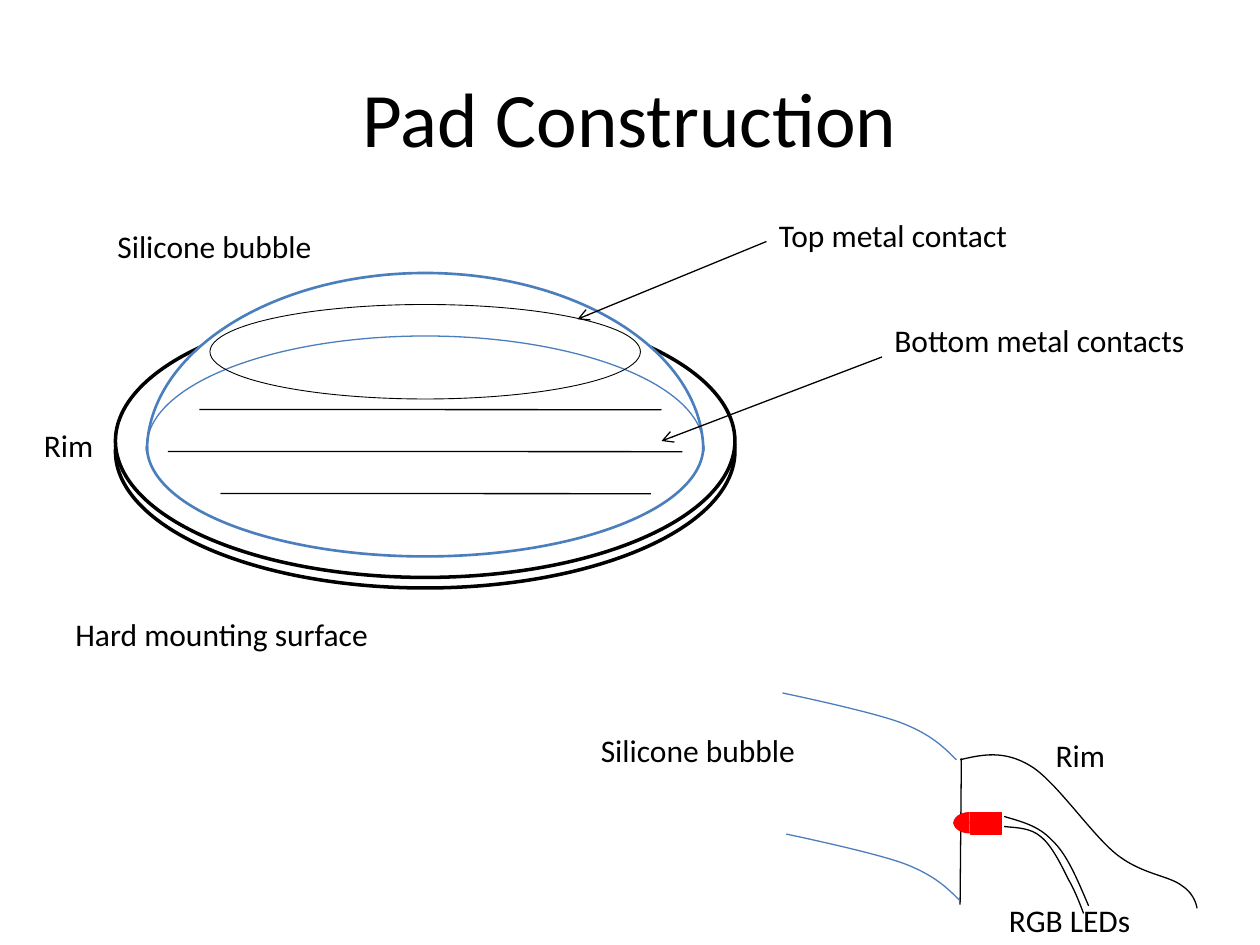
from lxml.etree import SubElement
from pptx import Presentation
from pptx.dml.color import RGBColor
from pptx.enum.shapes import MSO_CONNECTOR, MSO_SHAPE
from pptx.enum.text import MSO_ANCHOR, MSO_AUTO_SIZE, PP_ALIGN
from pptx.oxml.ns import qn
from pptx.util import Inches, Pt

BLACK, WHITE, BLUE, RED = "000000", "FFFFFF", "4B7EBC", "FF0000"


def color(hex_value):
    """Turn a hex string into a colour."""
    return RGBColor.from_string(hex_value)


def locate(region, point):
    """Turn a point on the grid of a region into slide lengths."""
    left, top, unit = region
    return Inches(left + point[0] * unit), Inches(top + point[1] * unit)


def style_text(frame, size, **formats):
    """Apply the font and the given frame settings."""
    for name, value in formats.items():
        setattr(frame, name, value)
    font = frame.paragraphs[0].runs[0].font
    for name, value in {"name": "Calibri", "size": Pt(size)}.items():
        setattr(font, name, value)
    font.color.rgb = color(BLACK)


def style_outline(shape, line, weight, fill=None):
    """Set fill and outline and remove the shadow."""
    shape.shadow.inherit = False
    shape.line.color.rgb = color(line)
    shape.line.width = Pt(weight)
    if fill:
        shape.fill.solid()
        shape.fill.fore_color.rgb = color(fill)
    else:
        shape.fill.background()


def add_label(slide, region, text, x, y, width):
    """Add an unwrapped caption of a width in inches."""
    label = slide.shapes.add_textbox(
        *locate(region, (x, y)), Inches(width), Inches(0.4))
    label.text_frame.text = text
    style_text(label.text_frame, 18, word_wrap=False,
               auto_size=MSO_AUTO_SIZE.SHAPE_TO_FIT_TEXT)


def add_preset(slide, region, kind, place, line, weight, fill=None, flip=""):
    """Add a preset shape, flipped along the axes named in flip."""
    x, y, width, height = place
    unit = region[2]
    shape = slide.shapes.add_shape(
        kind, *locate(region, (x, y)), Inches(width * unit), Inches(height * unit))
    style_outline(shape, line, weight, fill)
    for axis in flip:
        shape._element.spPr.xfrm.set("flip" + axis, "1")


def add_line(slide, region, start, end, arrow=False):
    """Add a thin black line, with an open arrowhead if asked."""
    line = slide.shapes.add_connector(
        MSO_CONNECTOR.STRAIGHT, *locate(region, start), *locate(region, end))
    line.line.color.rgb = color(BLACK)
    line.line.width = Pt(0.75)
    if arrow:
        SubElement(line.line._get_or_add_ln(), qn("a:tailEnd"), type="arrow")
    SubElement(line._element.spPr, qn("a:effectLst"))


def add_curve(slide, region, line, points):
    """Draw joined cubic curves, each with two control points and an end."""
    start, *others = [locate(region, point) for point in points]
    builder = slide.shapes.build_freeform(*start)
    builder.add_line_segments(others, close=False)
    curve = builder.convert_to_shape()
    style_outline(curve, line, 0.75)
    segments = list(curve._element.iter(qn("a:lnTo")))
    outline = segments[0].getparent()
    for first in range(0, len(segments), 3):
        cubic = SubElement(outline, qn("a:cubicBezTo"))
        for segment in segments[first:first + 3]:
            cubic.append(segment[0])
            outline.remove(segment)


def build_title(slide, left, top, width, height):
    """Fill the title placeholder."""
    title = slide.shapes.title
    box = {"left": left, "top": top, "width": width, "height": height}
    for name, value in box.items():
        setattr(title, name, Inches(value))
    title.text_frame.text = "Pad Construction"
    style_text(title.text_frame, 44, vertical_anchor=MSO_ANCHOR.MIDDLE)
    title.text_frame.paragraphs[0].alignment = PP_ALIGN.CENTER


def build_pad(slide, left, top):
    """Draw the pad and its captions on a grid of twelfths of an inch."""
    region = left, top, 1 / 12
    for rim_top in (4, 3):
        add_preset(slide, region, MSO_SHAPE.OVAL, (0, rim_top, 59, 26),
                   BLACK, 2, WHITE)
    dome, base = (3, 0, 53, 34), (3, 6, 53, 21)
    for place, weight, fill, upside in (
            (dome, 1.5, WHITE, ""), (base, 0.75, None, ""), (base, 1.5, None, "V")):
        for side in ("", "H"):
            add_preset(slide, region, MSO_SHAPE.ARC, place, BLUE, weight, fill,
                       side + upside)
    add_preset(slide, region, MSO_SHAPE.OVAL, (9, 3, 41, 9), BLACK, 0.5)
    for row, (start, end) in enumerate(((8, 52), (5, 54), (10, 51))):
        y = 13 + 4 * row
        add_line(slide, region, (start, y), (end, y + 0.02))
    for start, end in (((62, -3), (44, 4.4)), ((73, 8), (52, 16))):
        add_line(slide, region, start, end, arrow=True)
    for caption in (("Silicone bubble", -1, -5, 1.76),
                    ("Rim", -8, 14, 0.6),
                    ("Top metal contact", 62, -6, 2.03),
                    ("Bottom metal contacts", 73, 4, 2.53),
                    ("Hard mounting surface", -5, 32, 2.55)):
        add_label(slide, region, *caption)


def build_section(slide, left, top):
    """Draw the cross-section of the rim with its light and wires."""
    region = left, top, 1
    add_preset(slide, region, MSO_SHAPE.RECTANGLE, (1.5, 0.95, 0.25, 0.17),
               RED, 0.75, RED)
    add_line(slide, region, (1.43, 0.52), (1.42, 1.68))
    for flip, y in (("H", 0.95), ("HV", 0.94)):
        add_preset(slide, region, MSO_SHAPE.ARC, (1.37, y, 0.25, 0.17),
                   RED, 0.75, RED, flip)
    rim = [(1.42, 0.53), (1.59, 0.49), (1.77, 0.45), (1.98, 0.58), (2.18, 0.7),
           (2.46, 1.12), (2.66, 1.28), (2.86, 1.44), (3.08, 1.45), (3.18, 1.53),
           (3.29, 1.6), (3.3, 1.71), (3.3, 1.71)]
    upper_wire = [(1.77, 0.98), (1.9, 1.02), (2.04, 1.05), (2.15, 1.17),
                  (2.27, 1.28), (2.35, 1.48), (2.44, 1.69)]
    lower_wire = [(1.77, 1.06), (1.87, 1.07), (1.98, 1.07), (2.06, 1.14),
                  (2.15, 1.21), (2.23, 1.38), (2.28, 1.48), (2.34, 1.58),
                  (2.4, 1.75), (2.4, 1.75)]
    for points in (rim, upper_wire, lower_wire):
        add_curve(slide, region, BLACK, points)
    bubble = [(1.39, 0.53), (1.29, 0.43), (1.19, 0.33), (0.96, 0.24),
              (0.73, 0.15), (0.01, 0), (0.01, 0)]
    for dx, dy in ((0, 0), (0.03, 1.12)):
        add_curve(slide, region, BLUE, [(x + dx, y + dy) for x, y in bubble])
    for caption in (("Rim", 2.08, 0.29, 0.6), ("RGB LEDs", 1.71, 1.6, 1.17),
                    ("Silicone bubble", -1.53, 0.25, 1.76)):
        add_label(slide, region, *caption)


def main():
    """Build the slide and save it."""
    deck = Presentation()
    deck.slide_width, deck.slide_height = Inches(10), Inches(7.5)
    slide = deck.slides.add_slide(deck.slide_layouts[5])
    build_title(slide, 0.5, 0.3, 9, 1.25)
    build_pad(slide, 11 / 12, 26 / 12)
    build_section(slide, 6.2, 5.5)
    deck.save("out.pptx")


if __name__ == "__main__":
    main()
